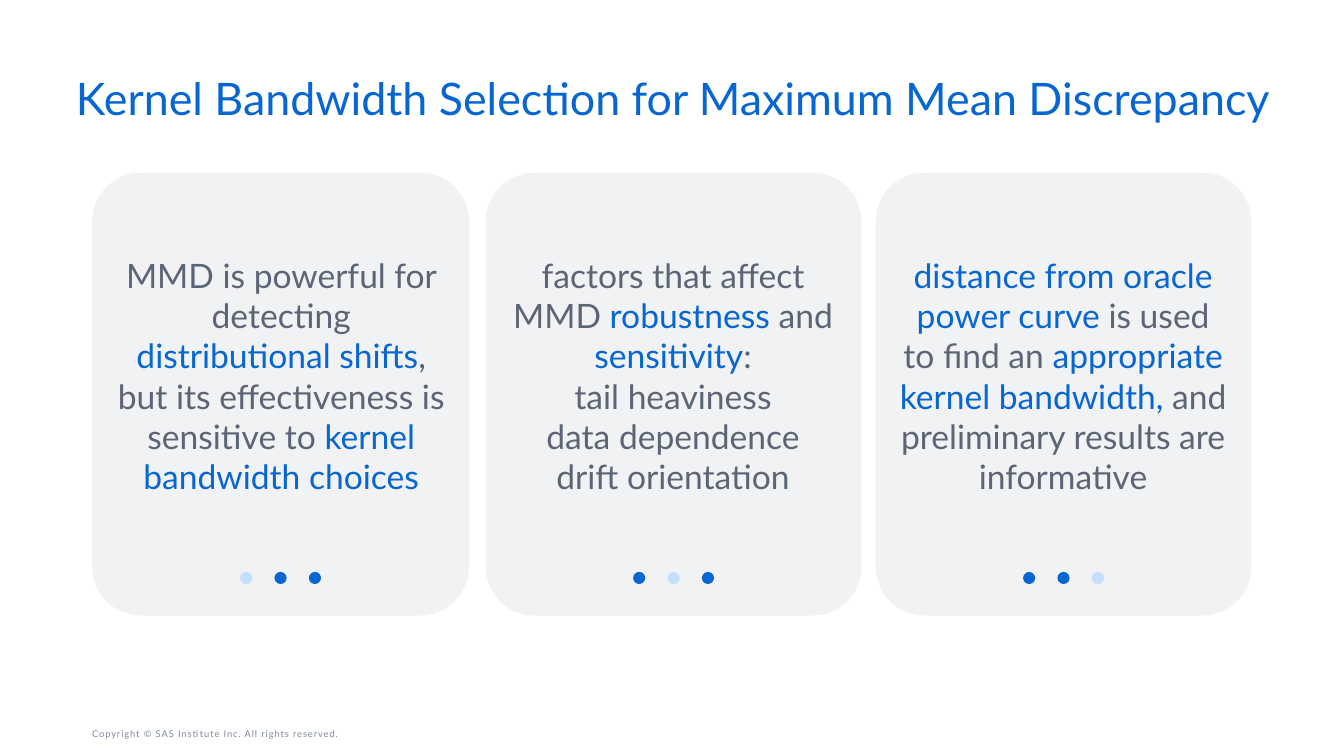
from typing import NamedTuple

from pptx import Presentation
from pptx import util as u
from pptx.dml.color import RGBColor
from pptx.enum import shapes, text

BLUE = RGBColor(0x07, 0x66, 0xD1)
PALE_BLUE = RGBColor(0xC4, 0xDE, 0xFD)
CARD_GRAY = RGBColor(0xF1, 0xF2, 0xF4)
BODY_GRAY = RGBColor(0x5C, 0x65, 0x76)
FOOTER_GRAY = RGBColor(0x7E, 0x88, 0x9A)
FONT = "Lato"

CARD_TOP, CARD_HEIGHT = 6.53, 16.74
BODY_TOP, BODY_HEIGHT = 9.63, 9.25
DOT_TOP, DOT_SIZE, DOT_PITCH = 21.62, 0.46, 1.3


class Phrase(NamedTuple):
    wording: str
    color: RGBColor = BODY_GRAY


class Card(NamedTuple):
    left: float
    width: float
    body_left: float
    body_width: float
    lines: list[list[Phrase]]


CARDS = [
    Card(3.48, 14.25, 4.24, 12.78, [[
        Phrase("MMD is powerful for detecting "),
        Phrase("distributional shifts", BLUE),
        Phrase(", but its effectiveness is sensitive to "),
        Phrase("kernel bandwidth choices", BLUE),
    ]]),
    Card(18.36, 14.2, 19.33, 12.22, [
        [
            Phrase("factors that affect MMD "),
            Phrase("robustness ", BLUE),
            Phrase("and"),
            Phrase(" sensitivity", BLUE),
            Phrase(":"),
        ],
        [Phrase("tail heaviness")],
        [Phrase("data dependence")],
        [Phrase("drift orientation")],
    ]),
    Card(33.1, 14.2, 33.91, 12.55, [[
        Phrase("distance from oracle power curve ", BLUE),
        Phrase("is used to find an "),
        Phrase("appropriate kernel bandwidth, ", BLUE),
        Phrase("and preliminary results are informative"),
    ]]),
]


def style_run(run, size: float, color: RGBColor) -> None:
    """Set the font, size and colour of a run."""
    run.font.name = FONT
    run.font.size = u.Pt(size)
    run.font.color.rgb = color


def add_frame(parent, left: float, top: float, width: float, height: float):
    """Add a wrapping text box without insets and return its text frame."""
    box = parent.add_textbox(u.Cm(left), u.Cm(top), u.Cm(width), u.Cm(height))
    frame = box.text_frame
    frame.word_wrap = True
    frame.margin_left = frame.margin_right = 0
    frame.margin_top = frame.margin_bottom = 0
    return frame


def add_filled(parent, kind, left: float, top: float, width: float,
               height: float, color: RGBColor):
    """Add a flat shape without outline."""
    shape = parent.add_shape(kind, u.Cm(left), u.Cm(top), u.Cm(width), u.Cm(height))
    shape.shadow.inherit = False
    shape.fill.solid()
    shape.fill.fore_color.rgb = color
    shape.line.fill.background()
    return shape


def add_card(slide, position: int, card: Card) -> None:
    """Draw a grouped card with its text and its three progress dots."""
    parts = slide.shapes.add_group_shape().shapes
    panel = add_filled(parts, shapes.MSO_SHAPE.ROUNDED_RECTANGLE, card.left,
                       CARD_TOP, card.width, CARD_HEIGHT, CARD_GRAY)
    panel.adjustments[0] = 0.13

    middle_dot = card.left + (card.width - DOT_SIZE) / 2
    for step in range(len(CARDS)):
        add_filled(parts, shapes.MSO_SHAPE.OVAL,
                   middle_dot + (step - 1) * DOT_PITCH, DOT_TOP, DOT_SIZE, DOT_SIZE,
                   PALE_BLUE if step == position else BLUE)

    body = add_frame(parts, card.body_left, BODY_TOP, card.body_width, BODY_HEIGHT)
    body.auto_size = text.MSO_AUTO_SIZE.SHAPE_TO_FIT_TEXT
    for number, line in enumerate(card.lines):
        paragraph = body.add_paragraph() if number else body.paragraphs[0]
        paragraph.alignment = text.PP_ALIGN.CENTER
        for phrase in line:
            run = paragraph.add_run()
            run.text = phrase.wording
            style_run(run, 36, phrase.color)


def add_copyright(slide) -> None:
    """Write the letter-spaced copyright line."""
    notice = add_frame(slide.shapes, 3.48, 27.38, 13.97, 0.69)
    notice.margin_right = u.Cm(0.25)
    notice.margin_top = notice.margin_bottom = u.Cm(0.13)
    notice.vertical_anchor = text.MSO_ANCHOR.BOTTOM
    notice.auto_size = text.MSO_AUTO_SIZE.SHAPE_TO_FIT_TEXT
    notice.text = "Copyright © SAS Institute Inc. All rights reserved."
    run = notice.paragraphs[0].runs[0]
    style_run(run, 10, FOOTER_GRAY)
    run.font._element.set("spc", "100")


def add_title(slide) -> None:
    """Write the slide title."""
    title = add_frame(slide.shapes, 2.87, 2.67, 46.63, 3.12)
    title.text = "Kernel Bandwidth Selection for Maximum Mean Discrepancy"
    style_run(title.paragraphs[0].runs[0], 48, BLUE)


def main() -> None:
    """Build and save the slide."""
    presentation = Presentation()
    presentation.slide_width = u.Cm(50.8)
    presentation.slide_height = u.Cm(28.58)
    slide = presentation.slides.add_slide(presentation.slide_layouts[6])
    add_copyright(slide)
    for position, card in enumerate(CARDS):
        add_card(slide, position, card)
    add_title(slide)
    presentation.save("out.pptx")


if __name__ == "__main__":
    main()
